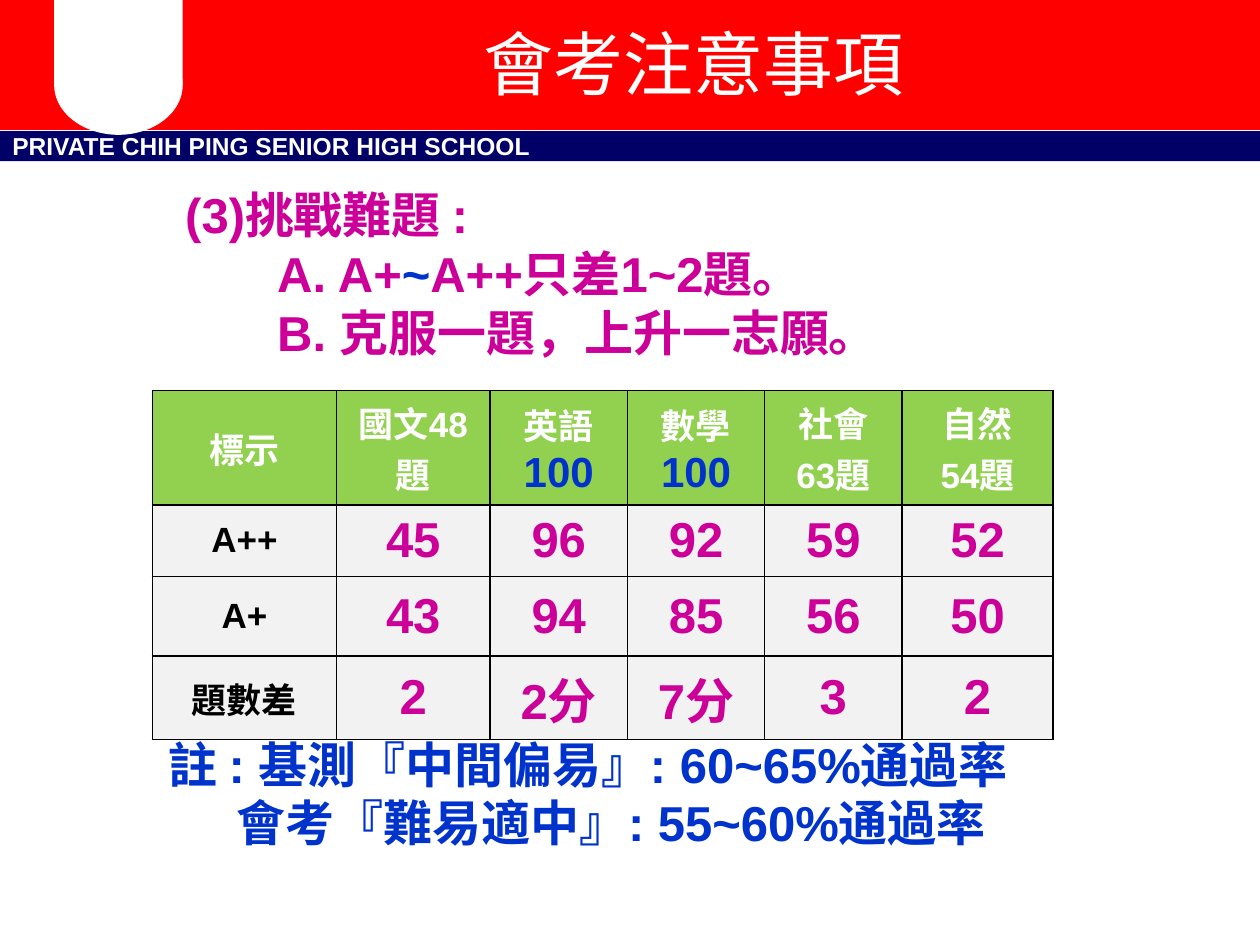
from lxml.etree import SubElement
from pptx import Presentation
from pptx.dml.color import RGBColor
from pptx.enum.shapes import MSO_SHAPE
from pptx.enum.text import MSO_ANCHOR, MSO_AUTO_SIZE, PP_ALIGN
from pptx.oxml.ns import qn
from pptx.util import Inches, Pt

WHITE, BLACK, RED, NAVY = "FFFFFF", "000000", "FF0000", "000066"
PINK, BLUE, GREEN, GRAY = "CC0099", "0033CC", "92D050", "F2F2F2"


def color(code):
    return RGBColor.from_string(code)


def put(para, text, size=28, fill=PINK, bold=True, font="Arial"):
    """Add one formatted run to a paragraph."""
    run = para.add_run()
    run.text = text
    run.font.name, run.font.size, run.font.bold = font, Pt(size), bold
    run.font.color.rgb = color(fill)


def paras(frame, count):
    """Return the given number of paragraphs of an empty frame."""
    return [frame.paragraphs[0]] + [frame.add_paragraph() for _ in range(count - 1)]


def border(cell):
    props = cell._tc.get_or_add_tcPr()
    for side in ("lnL", "lnR", "lnT", "lnB"):
        line = SubElement(props, qn("a:" + side), w=str(Pt(1)))
        fill = SubElement(line, qn("a:solidFill"))
        SubElement(fill, qn("a:srgbClr"), val=BLACK)


class Deck:
    font = "Arial"

    def __init__(self):
        self.file = Presentation()
        self.file.slide_width, self.file.slide_height = Inches(10), Inches(7.5)
        self.slide = self.file.slides.add_slide(self.file.slide_layouts[1])
        self.shapes = self.slide.shapes

    def shape(self, kind, box, fill, line=None):
        shape = self.shapes.add_shape(kind, *map(Inches, box))
        shape.shadow.inherit = False
        shape.fill.solid()
        shape.fill.fore_color.rgb = color(fill)
        if line:
            shape.line.color.rgb, shape.line.width = color(fill), Pt(line)
        else:
            shape.line.fill.background()
        return shape

    def bar(self, box, fill, text):
        frame = self.shape(MSO_SHAPE.RECTANGLE, box, fill).text_frame
        frame.word_wrap = False
        frame.vertical_anchor = MSO_ANCHOR.MIDDLE
        frame.paragraphs[0].alignment = PP_ALIGN.LEFT
        put(frame.paragraphs[0], text, size=14, fill=WHITE, font=self.font)

    def place(self, shape, box):
        shape.left, shape.top, shape.width, shape.height = map(Inches, box)
        shape.element.getparent().append(shape.element)
        shape.text_frame.word_wrap = True
        shape.text_frame.auto_size = MSO_AUTO_SIZE.NONE
        return shape.text_frame

    def title(self, box, text):
        frame = self.place(self.shapes.title, box)
        frame.vertical_anchor = MSO_ANCHOR.MIDDLE
        frame.paragraphs[0].alignment = PP_ALIGN.CENTER
        put(frame.paragraphs[0], text, size=40, fill=WHITE, bold=False, font=self.font)

    def lines(self, shape, box, rows):
        """Fill a shape with rows of (indent, (text, colour), ...)."""
        frame = self.place(shape, box)
        for i, (para, (indent, *runs)) in enumerate(zip(paras(frame, len(rows)), rows)):
            props = para._p.get_or_add_pPr()
            props.set("marL", str(Inches(indent)))
            props.set("indent", "0")
            SubElement(props, qn("a:buNone"))
            para.line_spacing = 0.82
            para.space_before = Pt(6 if i else 0)
            for text, fill in runs:
                put(para, text, fill=fill, font=self.font)

    def body(self, box, rows):
        self.lines(self.slide.placeholders[1], box, rows)

    def note(self, box, rows):
        self.lines(self.shapes.add_textbox(*map(Inches, box)), box, rows)

    def cell(self, cell, text, size, ink, fill):
        border(cell)
        cell.fill.solid()
        cell.fill.fore_color.rgb = color(fill)
        cell.vertical_anchor = MSO_ANCHOR.MIDDLE
        parts = text.split("\n")
        for para, part in zip(paras(cell.text_frame, len(parts)), parts):
            para.alignment = PP_ALIGN.CENTER
            score = part == "100"
            put(para, part, size=24 if score else size,
                fill=BLUE if score else ink, font=self.font)

    def table(self, left, top, widths, heights, rows):
        table = self.shapes.add_table(
            len(rows), len(widths), Inches(left), Inches(top),
            Inches(sum(widths)), Inches(sum(heights))).table
        for col, width in zip(table.columns, widths):
            col.width = Inches(width)
        for row, height in zip(table.rows, heights):
            row.height = Inches(height)
        for r, row in enumerate(rows):
            for c, text in enumerate(row):
                if r == 0:
                    style = 20, WHITE, GREEN
                elif c == 0:
                    style = 20, BLACK, GRAY
                else:
                    style = 28, PINK, GRAY
                self.cell(table.cell(r, c), text, *style)


def main():
    deck = Deck()
    deck.bar((0, 1.04, 10, 0.24), NAVY, "PRIVATE CHIH PING SENIOR HIGH SCHOOL")
    deck.shape(MSO_SHAPE.RECTANGLE, (0, 0, 10, 0.99), RED, line=6)
    deck.shape(MSO_SHAPE.RECTANGLE, (0.43, -0.03, 1.02, 0.71), WHITE)
    deck.shape(MSO_SHAPE.OVAL, (0.43, 0.28, 1.02, 0.79), WHITE)
    deck.title((1.53, 0, 7.95, 0.99), "會考注意事項")
    deck.body((1.24, 1.5, 7.17, 1.6), [
        (0.13, ("(3)挑戰難題 :", PINK)),
        (0.86, ("A. A+", PINK), ("~", BLUE), ("A++只差1~2題。", PINK)),
        (0.86, ("B. 克服一題，上升一志願。", PINK)),
    ])
    deck.table(1.21, 3.1, [1.46, 1.22, 1.09, 1.09, 1.09, 1.2],
               [0.84, 0.57, 0.63, 0.57], [
        ["標示", "國文48題", "英語\n100", "數學\n100", "社會\n63題", "自然\n54題"],
        ["A++", "45", "96", "92", "59", "52"],
        ["A+", "43", "94", "85", "56", "50"],
        ["題數差", "2", "2分", "7分", "3", "2"],
    ])
    deck.note((1.24, 5.86, 7.17, 1.6), [
        (0, ("註 : 基測『中間偏易』: 60~65%通過率", BLUE)),
        (0.54, ("會考『難易適中』: 55~60%通過率", BLUE)),
    ])
    deck.file.save("out.pptx")


if __name__ == "__main__":
    main()
